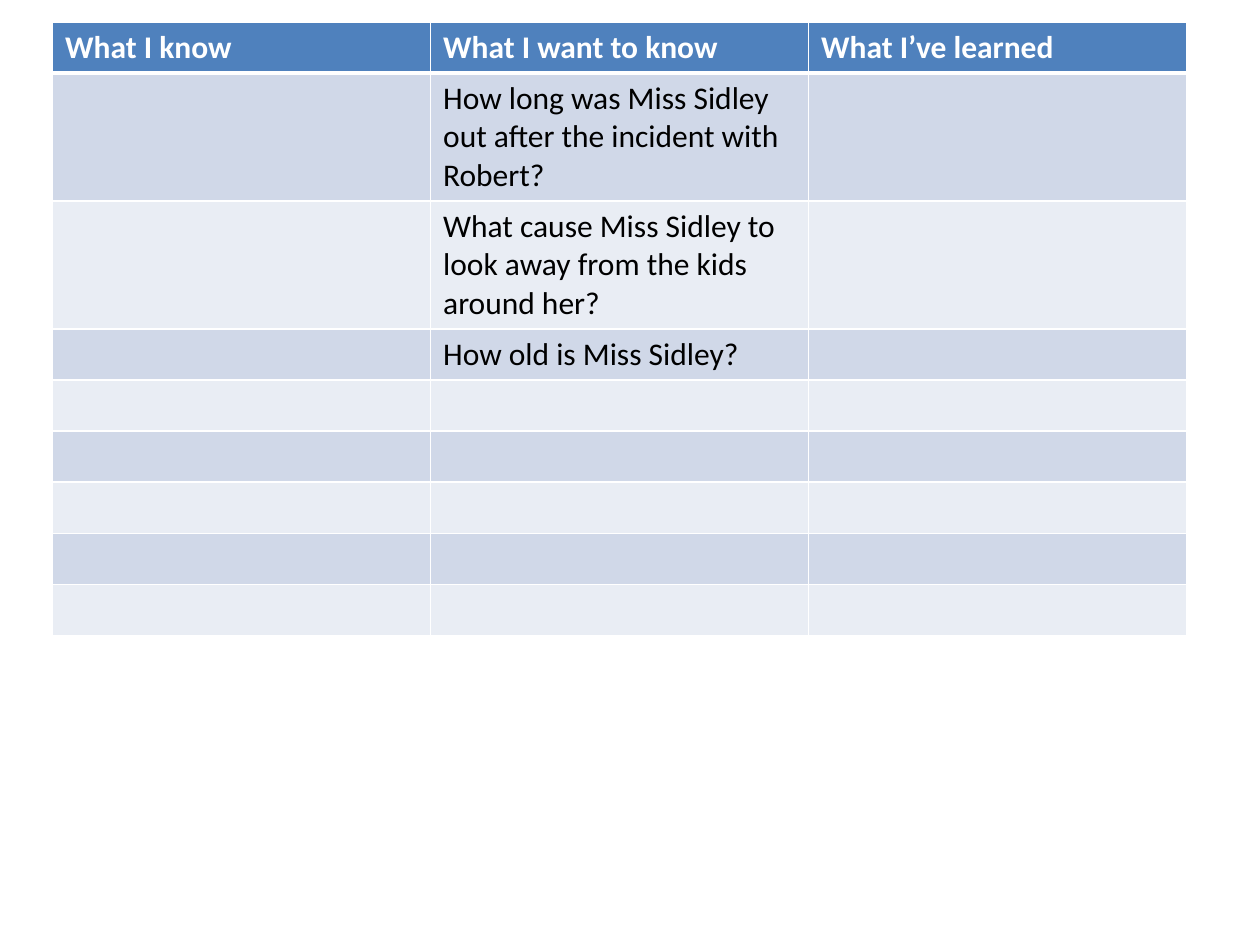
from dataclasses import dataclass

from lxml import etree
from pptx import Presentation
from pptx.dml.color import RGBColor
from pptx.oxml.ns import qn
from pptx.util import Cm, Pt

BLANK_LAYOUT = 6


@dataclass(frozen=True)
class Theme:
    font: str = "Calibri"
    text_size: int = 18
    header_fill: str = "4F81BD"
    header_text: str = "FFFFFF"
    body_text: str = "000000"
    bands: tuple[str, str] = ("D0D8E8", "E9EDF4")
    border: str = "FFFFFF"
    thin: int = 1
    thick: int = 3


@dataclass(frozen=True)
class ChartRow:
    known: str = ""
    question: str = ""
    learned: str = ""
    height: float = 1.03  # cm


THEME = Theme()
TALL = 2.58  # cm, room for three lines
COLUMN_WIDTH = 7.62  # cm
HEADER = ChartRow("What I know", "What I want to know", "What I’ve learned")
QUESTIONS = [
    ChartRow(question="How long was Miss Sidley out after the incident with Robert?", height=TALL),
    ChartRow(question="What cause Miss Sidley to look away from the kids around her?", height=TALL),
    ChartRow(question="How old is Miss Sidley?"),
]
EMPTY_ROWS = 5


def add_border(cell, side: str, width: int) -> None:
    line = etree.SubElement(cell._tc.get_or_add_tcPr(), qn(f"a:ln{side}"), w=str(Pt(width)))
    fill = etree.SubElement(line, qn("a:solidFill"))
    etree.SubElement(fill, qn("a:srgbClr"), val=THEME.border)


def fill_cell(cell, text: str, row_index: int) -> None:
    is_header = row_index == 0
    # Borders: the rule between header and body is thick
    for side in "LRTB":
        header_rule = (row_index, side) in ((0, "B"), (1, "T"))
        add_border(cell, side, THEME.thick if header_rule else THEME.thin)

    # Banded fill
    band = THEME.header_fill if is_header else THEME.bands[(row_index - 1) % 2]
    cell.fill.solid()
    cell.fill.fore_color.rgb = RGBColor.from_string(band)

    # Text
    paragraph = cell.text_frame.paragraphs[0]
    paragraph.text = text
    font = paragraph.font
    font.size = Pt(THEME.text_size)
    for run in paragraph.runs:
        run.font.name = THEME.font
        run.font.size = Pt(THEME.text_size)
        run.font.bold = is_header
        color = THEME.header_text if is_header else THEME.body_text
        run.font.color.rgb = RGBColor.from_string(color)


def add_kwl_table(slide, rows: list[ChartRow]) -> None:
    total_height = sum(row.height for row in rows)
    table = slide.shapes.add_table(
        len(rows), 3, Cm(1.06), Cm(0.44), Cm(3 * COLUMN_WIDTH), Cm(total_height)
    ).table
    for column in table.columns:
        column.width = Cm(COLUMN_WIDTH)
    for row_index, row in enumerate(rows):
        table.rows[row_index].height = Cm(row.height)
        for column_index, text in enumerate((row.known, row.question, row.learned)):
            fill_cell(table.cell(row_index, column_index), text, row_index)


def main() -> None:
    presentation = Presentation()
    presentation.slide_width = Cm(25.4)
    presentation.slide_height = Cm(19.05)
    slide = presentation.slides.add_slide(presentation.slide_layouts[BLANK_LAYOUT])
    add_kwl_table(slide, [HEADER, *QUESTIONS, *[ChartRow()] * EMPTY_ROWS])
    presentation.save("out.pptx")


if __name__ == "__main__":
    main()
